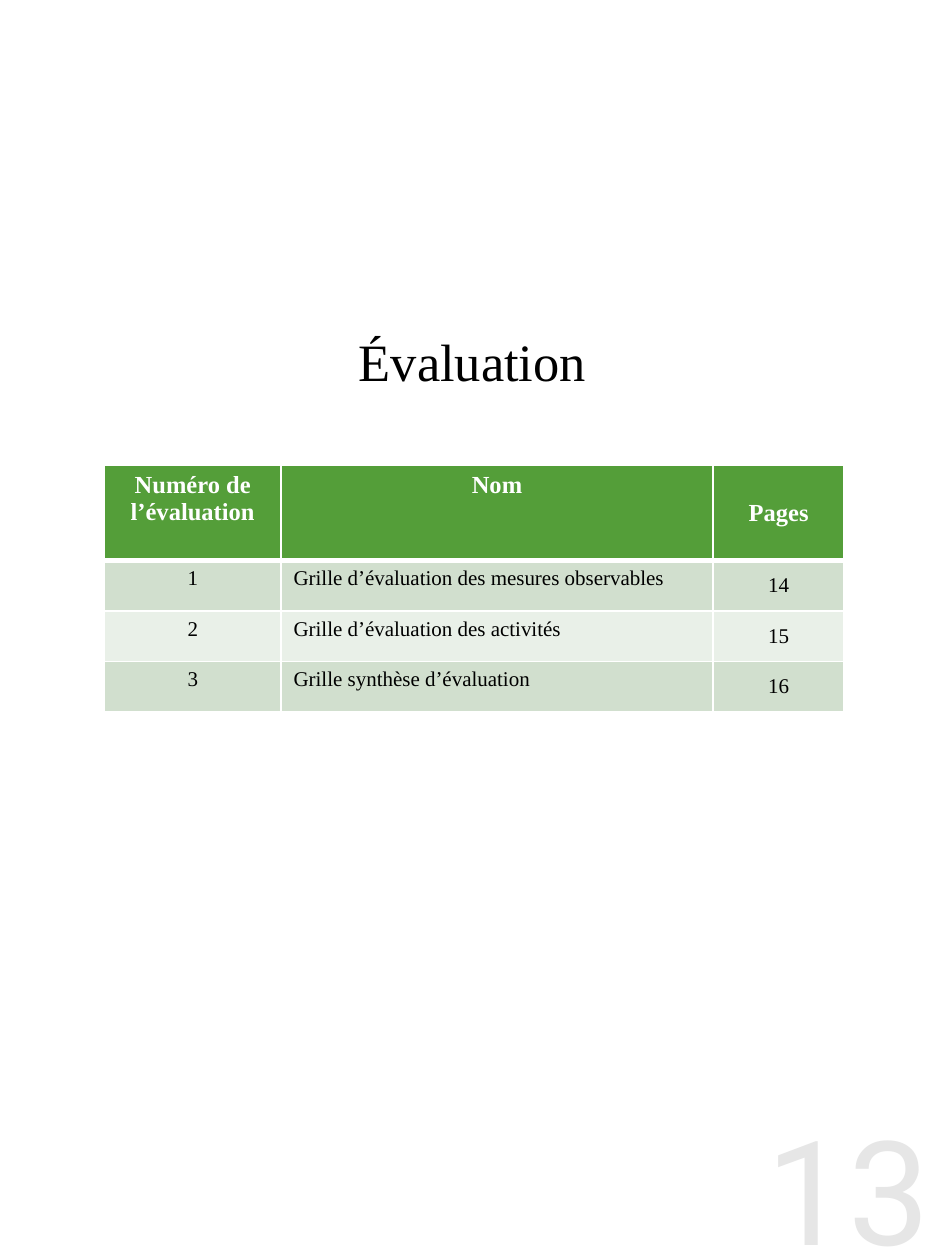
import pptx
import pptx.util
import pptx.dml.color
import pptx.enum.text
import pptx.oxml
import pptx.oxml.ns
from pptx.util import Inches

ALIGN = pptx.enum.text.PP_ALIGN
ANCHOR = pptx.enum.text.MSO_ANCHOR


def color(code):
    return pptx.dml.color.RGBColor.from_string(code)


class Page:
    serif = "Times New Roman"
    black, white, green = "000000", "FFFFFF", "549E39"
    bands = ("D1DFCE", "E9F0E8")

    def __init__(self, deck):
        self.slide = deck.slides.add_slide(deck.slide_layouts[5])

    def label(self, frame, text, size, tint, align, face=serif, bold=False):
        frame.text = text
        for para in frame.paragraphs:
            para.alignment = align
            font = para.font
            font.name, font.bold = face, bold
            font.size = pptx.util.Pt(size)
            font.color.rgb = color(tint)

    def title(self, text, left, top, width, height):
        box = self.slide.shapes.title
        box.left, box.top = Inches(left), Inches(top)
        box.width, box.height = Inches(width), Inches(height)
        box.text_frame.vertical_anchor = ANCHOR.MIDDLE
        self.label(box.text_frame, text, 30, self.black, ALIGN.CENTER)

    def number(self, text, left, top, width, height):
        box = self.slide.shapes.add_textbox(
            Inches(left), Inches(top), Inches(width), Inches(height))
        frame = box.text_frame
        frame.word_wrap = True
        frame.margin_left = frame.margin_right = 0
        frame.margin_top = frame.margin_bottom = 0
        self.label(frame, text, 83, "E6E6E6", ALIGN.RIGHT, "Roboto")

    def border(self, cell, top, bottom):
        props = cell._tc.get_or_add_tcPr()
        sides = {"lnL": 1, "lnR": 1, "lnT": top, "lnB": bottom}
        for place, (side, width) in enumerate(sides.items()):
            props.insert(place, pptx.oxml.parse_xml(
                f'<a:{side} {pptx.oxml.ns.nsdecls("a")} w="{pptx.util.Pt(width)}">'
                f'<a:solidFill><a:srgbClr val="{self.white}"/></a:solidFill>'
                f'</a:{side}>'))

    def table(self, rows, left, top, widths, heights):
        grid = self.slide.shapes.add_table(
            len(rows), len(widths), Inches(left), Inches(top),
            Inches(sum(widths)), Inches(sum(heights))).table
        for col, width in zip(grid.columns, widths):
            col.width = Inches(width)
        for r, (row, height) in enumerate(zip(rows, heights)):
            grid.rows[r].height = Inches(height)
            head = r == 0
            for c, text in enumerate(row):
                cell = grid.cell(r, c)
                cell.fill.solid()
                cell.fill.fore_color.rgb = color(
                    self.green if head else self.bands[(r - 1) % 2])
                self.border(cell, 3 if r == 1 else 1, 3 if head else 1)
                # The page column is centred vertically
                cell.vertical_anchor = ANCHOR.MIDDLE if c == 2 else ANCHOR.TOP
                self.label(cell.text_frame, text, 14 if head else 12,
                           self.white if head else self.black,
                           ALIGN.LEFT if c == 1 and not head else ALIGN.CENTER,
                           bold=head)


def main():
    deck = pptx.Presentation()
    deck.slide_width, deck.slide_height = Inches(7.5), Inches(10)
    page = Page(deck)

    # Title
    page.title("Évaluation", 0, 2.39, 7.5, 0.95)

    # List of evaluation grids
    rows = [
        ("Numéro de\nl’évaluation", "Nom", "Pages"),
        ("1", "Grille d’évaluation des mesures observables", "14"),
        ("2", "Grille d’évaluation des activités", "15"),
        ("3", "Grille synthèse d’évaluation", "16"),
    ]
    page.table(rows, 0.83, 3.69, (1.4, 3.43, 1.04), (0.76, 0.4, 0.4, 0.4))

    # Page number
    page.number("13", 5.38, 8.73, 2, 1.27)

    deck.save("out.pptx")


if __name__ == "__main__":
    main()
